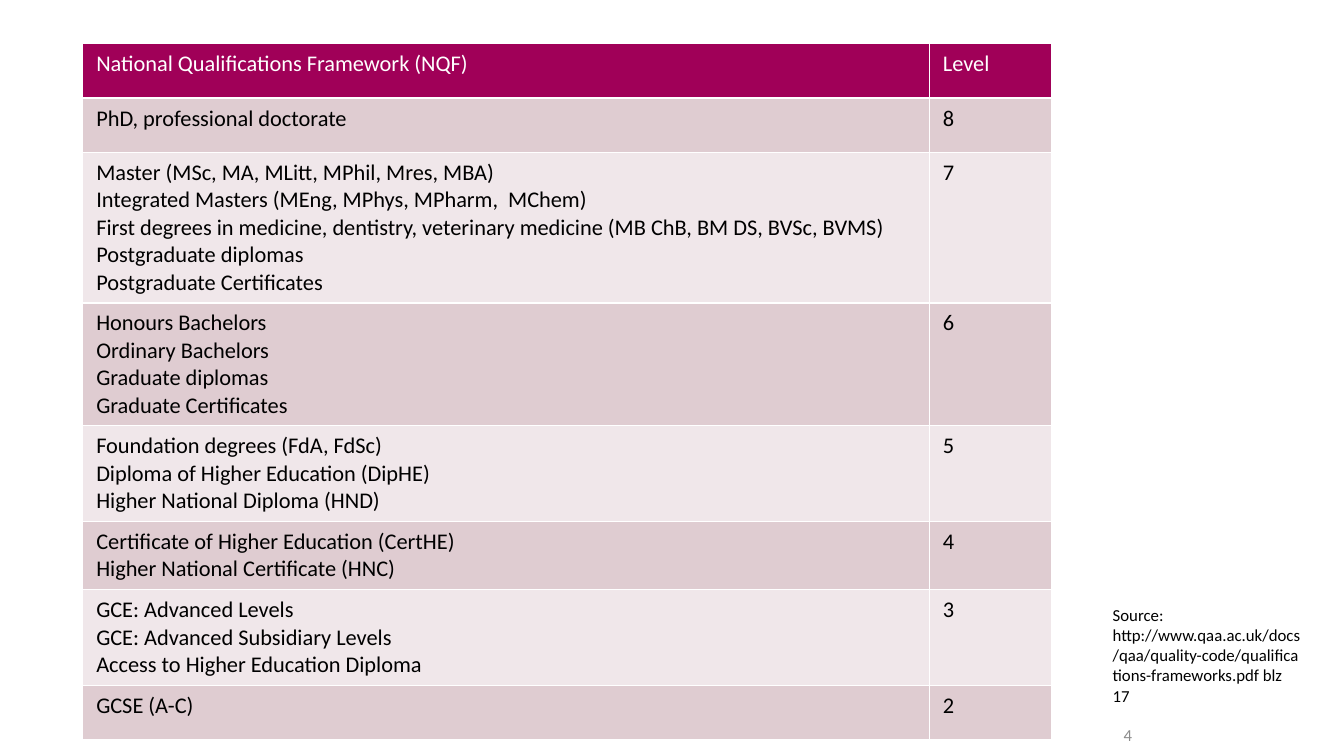
from typing import NamedTuple

import lxml.etree
import pptx
import pptx.dml.color
import pptx.enum.text
import pptx.oxml.ns
import pptx.util

Pt = pptx.util.Pt
ALIGN = pptx.enum.text.PP_ALIGN
ANCHOR = pptx.enum.text.MSO_ANCHOR

COLORS = {
    "header": "A00058",
    "dark_band": "DFCCD1",
    "light_band": "F0E7EA",
    "border": "FFFFFF",
    "header_text": "FFFFFF",
    "text": "000000",
    "page_number": "8C8C8C",
}
FONT = "Calibri"
TABLE_LEFT, TABLE_TOP = 59.2, 31
COLUMN_WIDTHS = (604.8, 87.1)
INSET_X, INSET_Y = 9.6, 4.8
LINE_HEIGHT, MIN_ROW_HEIGHT = 19.5, 39


class Row(NamedTuple):
    qualifications: str
    level: str


class Label(NamedTuple):
    text: str
    left: float
    top: float
    width: float
    height: float
    color: str
    align: ALIGN
    anchor: ANCHOR


ROWS = [
    Row("National Qualifications Framework (NQF)", "Level"),
    Row("PhD, professional doctorate", "8"),
    Row("Master (MSc, MA, MLitt, MPhil, Mres, MBA)\n"
        "Integrated Masters (MEng, MPhys, MPharm,  MChem)\n"
        "First degrees in medicine, dentistry, veterinary medicine (MB ChB, BM DS, BVSc, BVMS)\n"
        "Postgraduate diplomas\n"
        "Postgraduate Certificates", "7"),
    Row("Honours Bachelors\nOrdinary Bachelors\nGraduate diplomas\nGraduate Certificates", "6"),
    Row("Foundation degrees (FdA, FdSc)\nDiploma of Higher Education (DipHE)\n"
        "Higher National Diploma (HND)", "5"),
    Row("Certificate of Higher Education (CertHE)\nHigher National Certificate (HNC)", "4"),
    Row("GCE: Advanced Levels\nGCE: Advanced Subsidiary Levels\n"
        "Access to Higher Education Diploma", "3"),
    Row("GCSE (A-C)", "2"),
]

LABELS = [
    Label("4", 779.8, 514.8, 36, 20.2, "page_number", ALIGN.RIGHT, ANCHOR.MIDDLE),
    Label("Source: http://www.qaa.ac.uk/docs/qaa/quality-code/qualifications-frameworks.pdf blz 17",
          787.7, 428.4, 148.3, 108.7, "text", ALIGN.LEFT, ANCHOR.TOP),
]


def rgb(name: str) -> pptx.dml.color.RGBColor:
    return pptx.dml.color.RGBColor.from_string(COLORS[name])


def write_text(tf, text: str, *, size: float, color: str, align: ALIGN = ALIGN.LEFT) -> None:
    """Put each line of the text in its own paragraph."""
    for i, line in enumerate(text.split("\n")):
        p = tf.paragraphs[0] if i == 0 else tf.add_paragraph()
        p.alignment = align
        r = p.add_run()
        r.text = line
        r.font.name = FONT
        r.font.size = Pt(size)
        r.font.bold = False
        r.font.color.rgb = rgb(color)


def add_borders(cell) -> None:
    qn = pptx.oxml.ns.qn
    tc_pr = cell._tc.get_or_add_tcPr()
    for side in ("lnL", "lnR", "lnT", "lnB"):
        line = lxml.etree.SubElement(tc_pr, qn(f"a:{side}"), w=str(Pt(1)))
        fill = lxml.etree.SubElement(line, qn("a:solidFill"))
        lxml.etree.SubElement(fill, qn("a:srgbClr"), val=COLORS["border"])


def row_height(row: Row) -> float:
    lines = row.qualifications.count("\n") + 1
    return max(MIN_ROW_HEIGHT, 2 * INSET_Y + LINE_HEIGHT * lines)


def row_fill(index: int) -> str:
    if index == 0:
        return "header"
    return "dark_band" if index % 2 else "light_band"


def add_framework_table(s) -> None:
    heights = [row_height(row) for row in ROWS]
    table = s.shapes.add_table(
        len(ROWS), len(COLUMN_WIDTHS), Pt(TABLE_LEFT), Pt(TABLE_TOP),
        Pt(sum(COLUMN_WIDTHS)), Pt(sum(heights))).table
    for column, width in zip(table.columns, COLUMN_WIDTHS):
        column.width = Pt(width)
    for i, row in enumerate(ROWS):
        table.rows[i].height = Pt(heights[i])
        for j, text in enumerate(row):
            cell = table.cell(i, j)
            cell.margin_left = cell.margin_right = Pt(INSET_X)
            cell.margin_top = cell.margin_bottom = Pt(INSET_Y)
            add_borders(cell)
            cell.fill.solid()
            cell.fill.fore_color.rgb = rgb(row_fill(i))
            write_text(cell.text_frame, text, size=16,
                       color="text" if i else "header_text")


def add_label(s, label: Label) -> None:
    sp = s.shapes.add_textbox(Pt(label.left), Pt(label.top), Pt(label.width), Pt(label.height))
    tf = sp.text_frame
    tf.word_wrap = True
    tf.vertical_anchor = label.anchor
    write_text(tf, label.text, size=12, color=label.color, align=label.align)


def main() -> None:
    prs = pptx.Presentation()
    prs.slide_width, prs.slide_height = Pt(960), Pt(540)
    s = prs.slides.add_slide(prs.slide_layouts[6])
    add_framework_table(s)
    for label in LABELS:
        add_label(s, label)
    prs.save("out.pptx")


if __name__ == "__main__":
    main()
